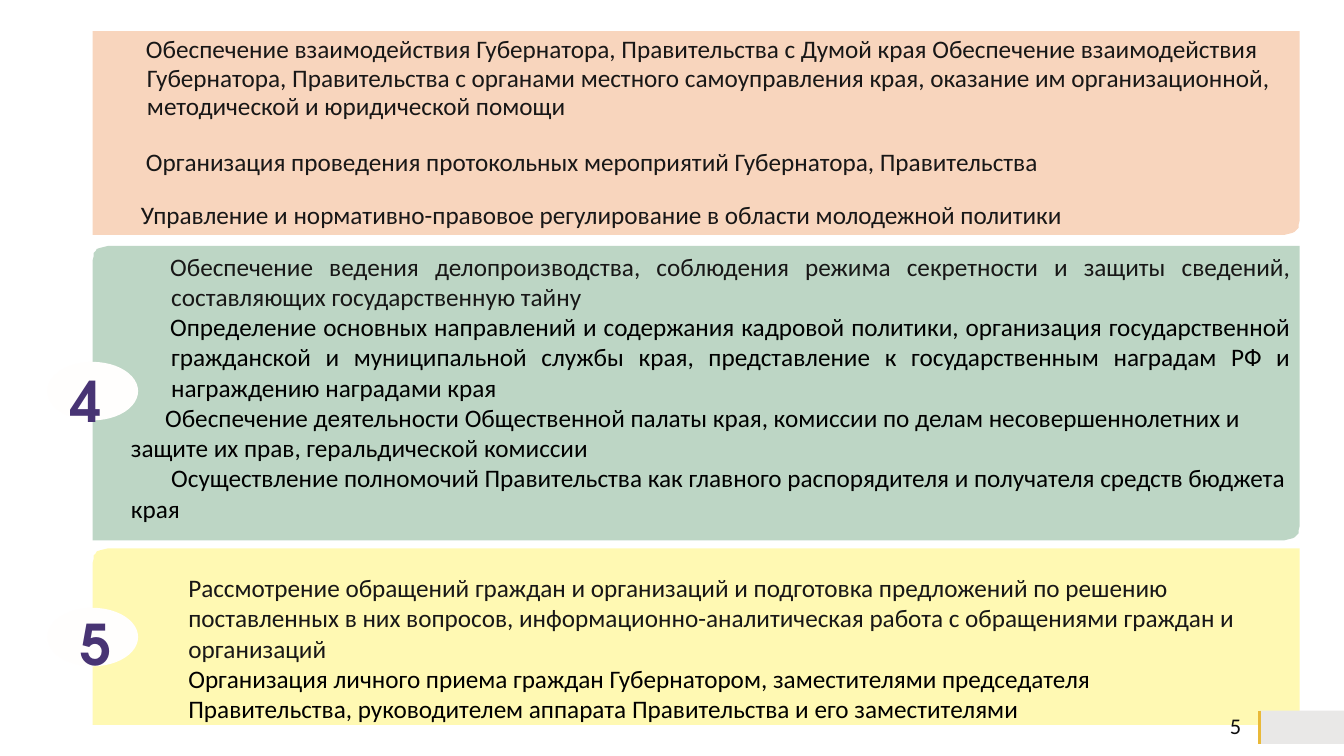
from lxml import etree
from pptx import Presentation
from pptx import util as u
from pptx.dml.color import RGBColor
from pptx.enum import shapes, text
from pptx.oxml import ns

PX = 9144
STEPS = 12
CORNER = (36, 24)
LEFT, WIDTH = 92, 1197
HANGING = (40, -1)
BODY, BLACK = "181717", "000000"
JUSTIFY, START = text.PP_ALIGN.JUSTIFY, text.PP_ALIGN.LEFT

PROTOCOL = [
    ("Обеспечение взаимодействия Губернатора, Правительства с Думой края Обеспечение взаимодействия "
     "Губернатора, Правительства с органами местного самоуправления края, оказание им организационной, "
     "методической и юридической помощи", BODY, START, HANGING, 0.94, 17.4),
    ("Организация проведения протокольных мероприятий Губернатора, Правительства",
     BODY, JUSTIFY, HANGING, 1.03, 15.8),
    ("Управление и нормативно-правовое регулирование в области молодежной политики",
     BODY, START, (0, 34), 1, 0),
]
PERSONNEL = [
    ("Обеспечение ведения делопроизводства, соблюдения режима секретности и защиты сведений, "
     "составляющих государственную тайну", BODY, JUSTIFY, HANGING, 1, 0),
    ("Определение основных направлений и содержания кадровой политики, организация государственной "
     "гражданской и муниципальной службы края, представление к государственным наградам РФ и "
     "награждению наградами края", BLACK, JUSTIFY, HANGING, 1, 0),
    ("Обеспечение деятельности Общественной палаты края, комиссии по делам несовершеннолетних и "
     "защите их прав, геральдической комиссии", BLACK, START, (0, 34), 1, 0),
    ("Осуществление полномочий Правительства как главного распорядителя и получателя средств бюджета "
     "края", BLACK, START, (0, 40), 1, 0),
]
APPEALS = [
    ("Рассмотрение обращений граждан и организаций и подготовка предложений по решению "
     "поставленных в них вопросов, информационно-аналитическая работа с обращениями граждан и "
     "организаций", BODY, START, (0, 0), 1, 0),
    ("Организация личного приема граждан Губернатором, заместителями председателя",
     BLACK, START, (0, 0), 1, 0),
    ("Правительства, руководителем аппарата Правительства и его заместителями",
     BLACK, START, (0, 0), 1, 0),
]


def emu(*lengths):
    """Turn px lengths into EMU."""
    return [u.Emu(round(length * PX)) for length in lengths]


def color(hex_value):
    """Turn a hex string into a colour."""
    return RGBColor.from_string(hex_value)


def paint(shape, fill):
    """Give a shape a plain fill without line or shadow."""
    shape.shadow.inherit = False
    shape.fill.solid()
    shape.fill.fore_color.rgb = color(fill)
    shape.line.fill.background()


def curve(start, corner, end):
    """List points of a corner whose two control points meet at the corner."""
    steps = [i / STEPS for i in range(STEPS + 1)]
    return [tuple((1 - t) ** 3 * a + 3 * t * (1 - t) * c + t ** 3 * b
                  for a, c, b in zip(start, corner, end)) for t in steps]


def panel(slide, box, fill, rounded_top):
    """Draw a panel with a rounded lower right and optionally upper left corner."""
    left, top, width, height = box
    right, bottom = left + width, top + height
    dx, dy = CORNER
    points = [(right, top)]
    points += curve((right, bottom - dy), (right, bottom), (right - dx, bottom))
    points.append((left, bottom))
    if rounded_top:
        points += curve((left, top + dy), (left, top), (left + dx, top))
    else:
        points.append((left, top))
    outline = slide.shapes.build_freeform(*points[0], scale=PX)
    outline.add_line_segments(points[1:], close=True)
    paint(outline.convert_to_shape(), fill)


def text_frame(slide, box, inset_x=10, inset_y=5):
    """Add a wrapping text box and return its frame."""
    frame = slide.shapes.add_textbox(*emu(*box)).text_frame
    frame.word_wrap = True
    frame.margin_left, frame.margin_right = emu(inset_x, inset_x)
    frame.margin_top, frame.margin_bottom = emu(inset_y, inset_y)
    return frame


def style(paragraph, size, font, fill, bold=False):
    """Format the runs of a paragraph."""
    for run in paragraph.runs:
        run.font.size, run.font.name, run.font.bold = u.Pt(size), font, bold
        run.font.color.rgb = color(fill)


def duties(slide, box, entries):
    """Write the list of duties of one panel."""
    frame = text_frame(slide, box)
    for index, (wording, fill, align, indents, spacing, after) in enumerate(entries):
        duty = frame.paragraphs[0] if index == 0 else frame.add_paragraph()
        duty.text = wording
        duty.alignment, duty.line_spacing, duty.space_after = align, spacing, u.Pt(after)
        margin, indent = emu(*indents)
        properties = duty._p.get_or_add_pPr()
        properties.set("marL", str(margin))
        properties.set("indent", str(indent))
        style(duty, 18, "Calibri", fill)


def badge(slide, box, number, offset_x, offset_y):
    """Draw a pale oval with its section number."""
    left, top, width, height = box
    oval = slide.shapes.add_shape(shapes.MSO_SHAPE.OVAL, *emu(*box))
    paint(oval, "FFFEFD")
    frame = text_frame(slide, (left + offset_x, top + offset_y, 40, height), 0, 0)
    frame.text = number
    frame.paragraphs[0].line_spacing = 1.07
    style(frame.paragraphs[0], 40, "TeX Gyre Adventor", "483474", True)


def footer(slide, box, number):
    """Place the page number, the grey block and its gold edge."""
    left, top, width, height = box
    page = text_frame(slide, (left - 74, top, 66, 30))
    page.vertical_anchor = text.MSO_ANCHOR.MIDDLE
    page.text = number
    page.paragraphs[0].alignment = text.PP_ALIGN.RIGHT
    style(page.paragraphs[0], 16, "Calibri", "0D0D0D")
    block = slide.shapes.add_shape(shapes.MSO_SHAPE.RECTANGLE, *emu(*box))
    paint(block, "E9E8E7")
    edge = slide.shapes.add_connector(
        shapes.MSO_CONNECTOR.STRAIGHT, *emu(left, top, left, top + height))
    edge.line.color.rgb, edge.line.width = color("E9B939"), u.Pt(2)
    etree.SubElement(edge._element.spPr, ns.qn("a:effectLst"))


def main():
    """Build the slide and save it."""
    deck = Presentation()
    deck.slide_width, deck.slide_height = emu(1333, 750)
    slide = deck.slides.add_slide(deck.slide_layouts[6])
    panel(slide, (LEFT, 244, WIDTH, 292), "BDD6C5", True)
    panel(slide, (LEFT, 544, WIDTH, 175), "FFF9B3", True)
    panel(slide, (LEFT, 31, WIDTH, 202), "F8D5BD", False)
    badge(slide, (47, 359, 90, 58), "4", 23, 0)
    badge(slide, (47, 603, 90, 58), "5", 33, -3)
    duties(slide, (96, 31, WIDTH, 203), PROTOCOL)
    duties(slide, (120, 244, 1170, 283), PERSONNEL)
    duties(slide, (177, 563, 1084, 162), APPEALS)
    footer(slide, (1249, 705, 84, 33), "5")
    deck.save("out.pptx")


if __name__ == "__main__":
    main()
